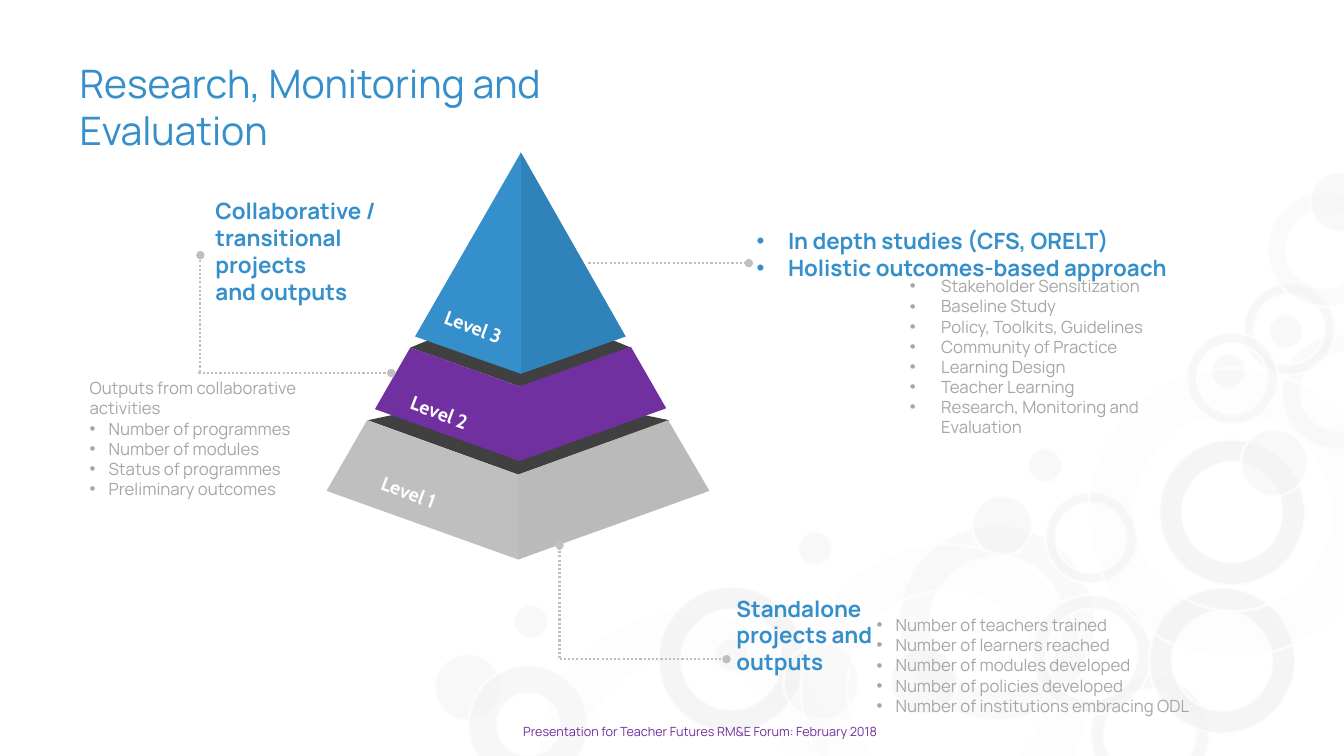
"""Builds the Research, Monitoring and Evaluation pyramid slide."""
from dataclasses import dataclass
from typing import NamedTuple

from lxml.etree import SubElement
from pptx import Presentation
from pptx.dml.color import RGBColor as RGB
from pptx.enum.dml import MSO_LINE
from pptx.enum.shapes import MSO_CONNECTOR, MSO_SHAPE
from pptx.enum.text import MSO_ANCHOR, MSO_AUTO_SIZE, PP_ALIGN
from pptx.oxml.ns import qn
from pptx.util import Cm, Pt

COLORS = {
    "blue": "358FCB", "blue_dark": "3082BA", "purple": "7030A0",
    "silver": "BFBFBF", "silver_dark": "BABABA", "gap": "404040",
    "bubble": "F2F2F2", "white": "FFFFFF", "note": "A6A6A6",
}


class Bubble(NamedTuple):
    left: float
    top: float
    size: float
    opacity: int
    ring: float = 0


class Face(NamedTuple):
    color: str
    points: list[tuple[float, float]]


class Leader(NamedTuple):
    x1: float
    y1: float
    x2: float
    y2: float


@dataclass
class Note:
    left: float
    top: float
    width: float
    height: float
    size: float
    color: str
    plain: tuple[str, ...] = ()
    bullets: tuple[str, ...] = ()
    indent: float = 0.48
    bold: bool = False
    font: str = "Manrope"
    align: PP_ALIGN = PP_ALIGN.LEFT
    rotation: float = 0
    wrap: bool = True


BUBBLES = [
    Bubble(29.21, 11.07, 3.68, 75, 0.159),
    Bubble(32.31, 8.43, 2.9, 31, 0.159),
    Bubble(13.59, 15.42, 7.29, 13, 0.159),
    Bubble(27.48, 17.02, 3, 54, 0.117),
    Bubble(31.34, 7.14, 2.31, 54, 0.117),
    Bubble(31.27, 10.82, 1.68, 47),
    Bubble(30.53, 8.92, 0.86, 47),
    Bubble(22.66, 13.23, 4.93, 42, 0.159),
    Bubble(16.59, 14.78, 3.68, 75, 0.159),
    Bubble(19.74, 16.23, 1.9, 39),
    Bubble(24.51, 12.5, 1.5, 47),
    Bubble(20.19, 13.72, 7.29, 13, 0.159),
    Bubble(26.01, 14.99, 3, 54, 0.117),
    Bubble(26.34, 12.4, 2.31, 54, 0.117),
    Bubble(20.12, 13.39, 0.86, 47),
    Bubble(10.95, 16.48, 1.68, 47),
    Bubble(18.01, 16.08, 0.86, 47),
    Bubble(25.91, 11.3, 0.86, 47),
    Bubble(28.96, 14.81, 3.68, 75, 0.159),
    Bubble(31.95, 4.83, 2.9, 31, 0.159),
    Bubble(33.02, 4.34, 1.5, 47),
    Bubble(27.43, 9.27, 7.29, 13, 0.159),
    Bubble(29.9, 8.38, 2.31, 54, 0.117),
    Bubble(11.81, 16.76, 3, 54, 0.24),
    Bubble(31.98, 7.92, 0.86, 47),
    Bubble(22.45, 16.33, 1.68, 47),
    Bubble(12.95, 15.24, 0.86, 47),
]
FACES = [
    Face("gap", [(13, 9.8), (9.27, 10.59), (13.06, 11.96), (16.87, 10.59)]),
    Face("gap", [(13.13, 7.62), (10.34, 8.76), (13.13, 9.75), (15.9, 8.76)]),
    Face("blue_dark", [(13.13, 3.84), (13.13, 9.42), (15.77, 8.48)]),
    Face("blue", [(13.13, 9.42), (13.13, 3.84), (10.46, 8.48)]),
    Face("silver_dark", [(13.06, 11.96), (13.06, 14.1), (17.88, 12.37), (16.84, 10.59)]),
    Face("silver", [(8.23, 12.37), (13.06, 14.1), (13.06, 11.96), (9.25, 10.59)]),
    Face("purple", [(15.9, 8.74), (13.11, 9.73), (13.11, 11.61), (16.79, 10.29)]),
    Face("purple", [(9.45, 10.31), (13.13, 11.63), (13.13, 9.75), (10.34, 8.76)]),
]
LEADERS = [
    Leader(14.83, 6.63, 18.87, 6.63),
    Leader(5, 9.4, 9.86, 9.4),
    Leader(5.05, 9.37, 5.05, 6.43),
    Leader(14.1, 16.61, 18.31, 16.61),
    Leader(14.1, 16.59, 14.1, 13.74),
]
LEVELS = [
    Note(left, top, 2.01, 0.86, 14, "white", (name,), bold=True, font="Cabin",
         align=PP_ALIGN.RIGHT, rotation=20.6, wrap=False)
    for name, left, top in [("Level 3", 10.92, 7.8), ("Level 2", 10.06, 9.96),
                            ("Level 1", 9.25, 11.96)]
]
NOTES = [
    Note(18.82, 5.61, 10.92, 6.15, 16, "blue", bold=True, indent=0.79,
         bullets=("In depth studies (CFS, ORELT)", "Holistic outcomes-based approach")),
    Note(5.18, 4.85, 5.41, 3, 16, "blue", bold=True,
         plain=("Collaborative / transitional", "projects", "and outputs")),
    Note(18.31, 14.86, 4.57, 2.74, 16, "blue", bold=True,
         plain=("Standalone projects and outputs",)),
    Note(21.84, 15.37, 9.42, 3.2, 12, "note",
         bullets=("Number of teachers trained", "Number of learners reached",
                  "Number of modules developed", "Number of policies developed",
                  "Number of institutions embracing ODL")),
    Note(2.01, 9.4, 6.48, 2.82, 12, "note",
         plain=("Outputs from collaborative activities",),
         bullets=("Number of programmes", "Number of modules",
                  "Status of programmes", "Preliminary outcomes")),
    Note(22.68, 6.83, 7.7, 3.84, 12, "note", indent=0.79,
         bullets=("Stakeholder Sensitization", "Baseline Study",
                  "Policy, Toolkits, Guidelines", "Community of Practice",
                  "Learning Design", "Teacher Learning",
                  "Research, Monitoring and Evaluation")),
]
FOOTER = Note(9.17, 18.11, 16.94, 0.64, 9, "purple", align=PP_ALIGN.CENTER,
              plain=("Presentation for Teacher Futures RM&E Forum: February 2018",))
TITLE = Note(1.75, 1.37, 14.45, 1.45, 28, "blue",
             plain=("Research, Monitoring and Evaluation",))


def rgb(name: str) -> RGB:
    return RGB.from_string(COLORS[name])


def draw_bubble(sp, b: Bubble) -> None:
    kind = MSO_SHAPE.DONUT if b.ring else MSO_SHAPE.OVAL
    s = sp.add_shape(kind, Cm(b.left), Cm(b.top), Cm(b.size), Cm(b.size))
    if b.ring:
        s.adjustments[0] = b.ring
    s.shadow.inherit = False
    s.fill.solid()
    s.fill.fore_color.rgb = rgb("bubble")
    s.line.color.rgb = rgb("white")
    s.line.width = Pt(2)
    for color, opacity in zip(s.element.spPr.iter(qn("a:srgbClr")), (b.opacity, 70)):
        SubElement(color, qn("a:alpha"), val=str(opacity * 1000))


def draw_face(sp, face: Face) -> None:
    start, *rest = [(Cm(x), Cm(y)) for x, y in face.points]
    outline = sp.build_freeform(*start)
    outline.add_line_segments(rest, close=True)
    s = outline.convert_to_shape()
    s.shadow.inherit = False
    s.fill.solid()
    s.fill.fore_color.rgb = rgb(face.color)
    s.line.fill.background()


def draw_leader(sp, leader: Leader) -> None:
    s = sp.add_connector(MSO_CONNECTOR.STRAIGHT, *map(Cm, leader))
    s.line.color.rgb = rgb("silver")
    s.line.width = Pt(1.5)
    s.line.dash_style = MSO_LINE.ROUND_DOT
    SubElement(s.element.spPr.find(qn("a:ln")), qn("a:tailEnd"), type="oval")
    SubElement(s.element.spPr, qn("a:effectLst"))


def write_note(s, note: Note) -> None:
    s.left, s.top, s.width, s.height = map(Cm, (note.left, note.top, note.width, note.height))
    s.rotation = note.rotation
    tf = s.text_frame
    tf.auto_size = MSO_AUTO_SIZE.NONE
    tf.word_wrap = note.wrap
    tf.vertical_anchor = MSO_ANCHOR.TOP
    for i, text in enumerate(note.plain + note.bullets):
        p = tf.add_paragraph() if i else tf.paragraphs[0]
        p.alignment = note.align
        if i >= len(note.plain):
            pPr = p._p.get_or_add_pPr()
            pPr.set("marL", str(Cm(note.indent)))
            pPr.set("indent", str(-Cm(note.indent)))
            SubElement(pPr, qn("a:buFont"), typeface="Arial")
            SubElement(pPr, qn("a:buChar"), char="•")
        r = p.add_run()
        r.text = text
        r.font.name, r.font.size, r.font.bold = note.font, Pt(note.size), note.bold
        r.font.color.rgb = rgb(note.color)


def main() -> None:
    prs = Presentation()
    prs.slide_width, prs.slide_height = Cm(33.87), Cm(19.05)
    sp = prs.slides.add_slide(prs.slide_layouts[5]).shapes
    write_note(sp.title, TITLE)
    for draw, items in ((draw_bubble, BUBBLES), (draw_face, FACES), (draw_leader, LEADERS)):
        for item in items:
            draw(sp, item)
    for note in [FOOTER, *LEVELS, *NOTES]:
        write_note(sp.add_textbox(0, 0, 0, 0), note)
    prs.save("out.pptx")


if __name__ == "__main__":
    main()
